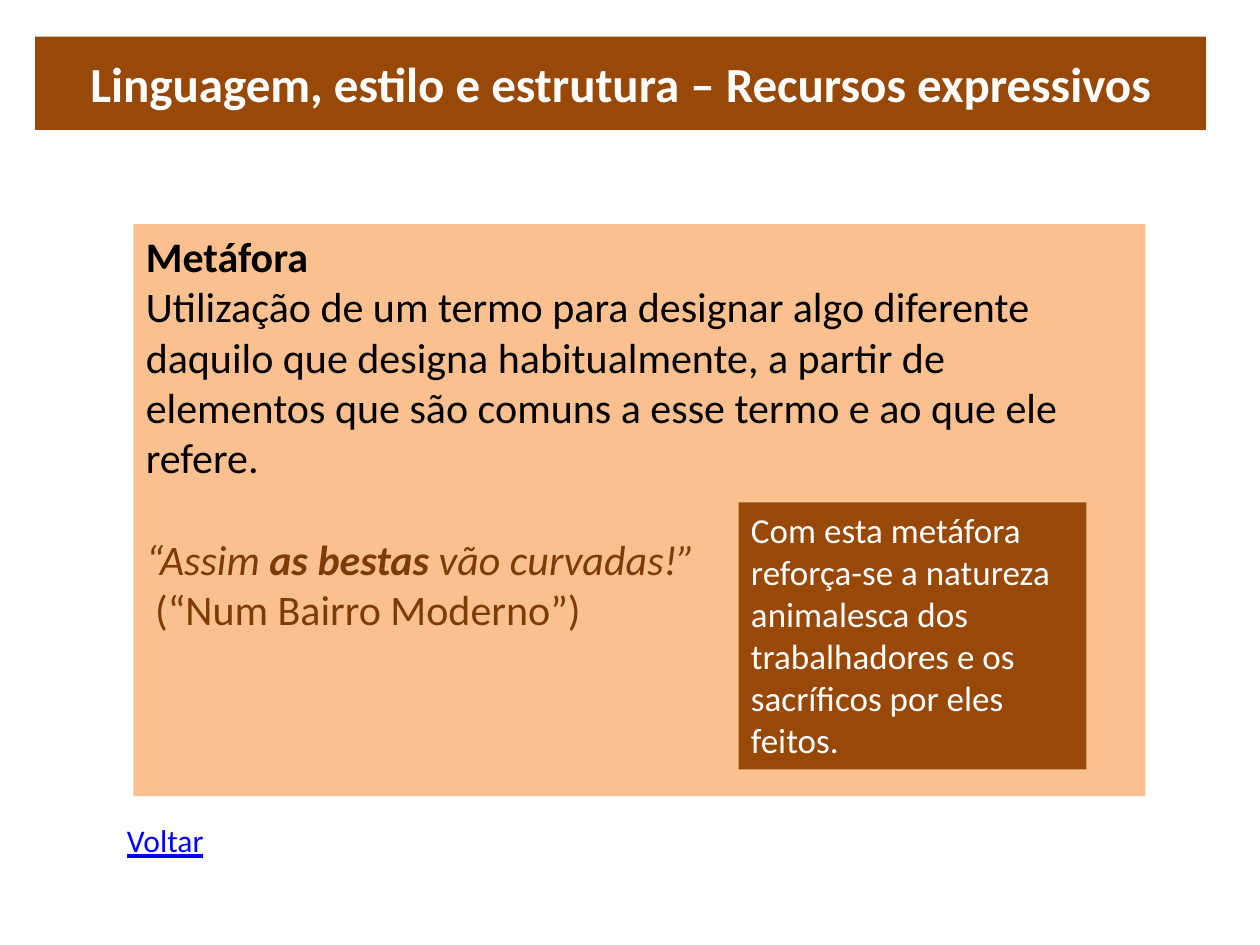
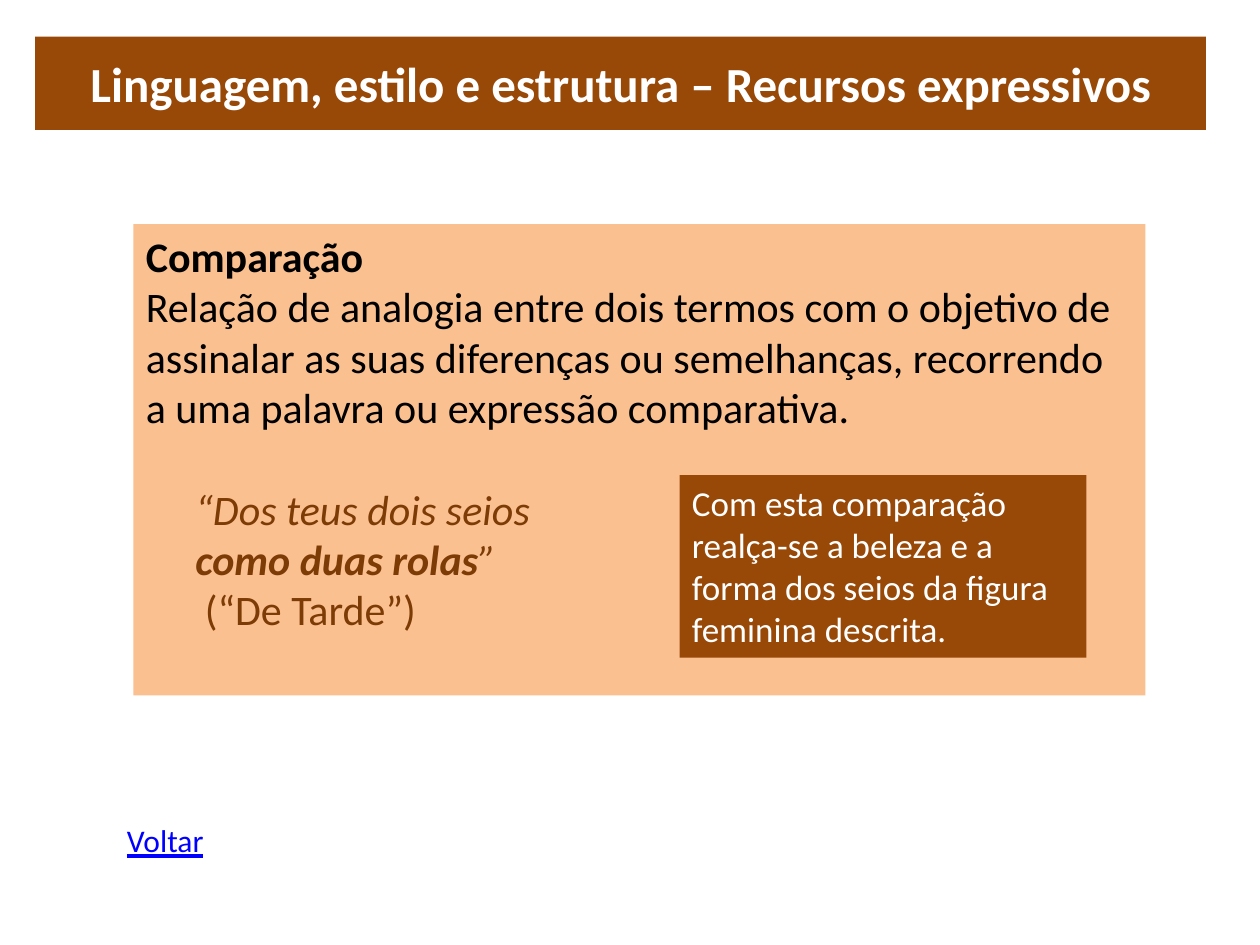
from lxml import etree
from pptx import Presentation, util as u
from pptx.dml.color import RGBColor
from pptx.enum import shapes, text
from pptx.oxml.ns import qn

HUES = {"brown": "984807", "peach": "FAC090", "quote": "7D3B05",
        "white": "FFFFFF", "black": "000000", "link": "0000FF"}
HEAD = "Linguagem, estilo e estrutura – Recursos expressivos"
EDGE = 21.9
GAP = 1.03
SPACE = 0.19

TERM = {"size": 24, "bold": True, "hue": "black"}
BODY = {**TERM, "bold": False}
CITE = {**BODY, "italic": True, "hue": "quote"}
KEY = {**CITE, "bold": True}
WORK = {**CITE, "italic": False}
NOTE = {"size": 20, "hue": "white"}
BACK = {"size": 18, "underline": True, "hue": "link"}
TITLE = {"size": 28, "bold": True, "hue": "white"}

SLIDES = [
    {"term": "Metáfora", "tall": 11.53, "pad": 0,
     "body": "Utilização de um termo para designar algo diferente daquilo que "
             "designa habitualmente, a partir de elementos que são comuns a "
             "esse termo e ao que ele refere.",
     "quote": [[("“Assim ", CITE), ("as bestas ", KEY), ("vão curvadas!”", CITE)]],
     "work": "(“Num Bairro Moderno”)",
     "note": ["Com esta metáfora reforça-se a natureza",
              "animalesca dos trabalhadores e os",
              "sacríficos por eles feitos."],
     "box": (10.13, 7.01, 5.38)},
    {"term": "Comparação", "tall": 9.5, "pad": 1,
     "body": "Relação de analogia entre dois termos com o objetivo de assinalar "
             "as suas diferenças ou semelhanças, recorrendo a uma palavra ou "
             "expressão comparativa.",
     "quote": [[("“Dos teus dois seios", CITE)],
               [("como duas rolas", KEY), ("”", CITE)]],
     "work": "(“De Tarde”)",
     "note": ["Com esta comparação realça-se a beleza e a forma dos seios da "
              "figura feminina descrita."],
     "box": (9.58, 8.2, 3.68)},
]


def paint(shape, hue):
    shape.fill.solid()
    shape.fill.fore_color.rgb = RGBColor.from_string(HUES[hue])
    shape.line.fill.background()


def place(shape, *at):
    for name, size in zip(("left", "top", "width", "height"), at):
        setattr(shape, name, u.Cm(size))


def style(font, form):
    for name, value in {"name": "Calibri", **form}.items():
        if name == "hue":
            font.color.rgb = RGBColor.from_string(HUES[value])
        else:
            setattr(font, name, u.Pt(value) if name == "size" else value)


def write(shape, paras, align=text.PP_ALIGN.LEFT, anchor=text.MSO_ANCHOR.TOP):
    frame = shape.text_frame
    frame.word_wrap = True
    frame.auto_size = text.MSO_AUTO_SIZE.NONE
    frame.vertical_anchor = anchor
    for i, (runs, pad, gap) in enumerate(paras):
        para = frame.add_paragraph() if i else frame.paragraphs[0]
        para.alignment = align
        para.space_before = u.Cm(gap)
        if pad:
            para._p.get_or_add_pPr().set("marL", str(u.Cm(pad)))
        for words, form in runs:
            run = para.add_run()
            run.text = words
            style(run.font, form)


def plain(words, form, pad=0):
    return [(words, form)], pad, 0


def add_title(slide):
    title = slide.shapes.title
    place(title, 0.71, 0.74, 23.6, 1.88)
    geom = etree.SubElement(title._element.spPr, qn("a:prstGeom"), prst="roundRect")
    etree.SubElement(geom, qn("a:avLst"))
    paint(title, "brown")
    write(title, [plain(HEAD, TITLE)], text.PP_ALIGN.CENTER, text.MSO_ANCHOR.MIDDLE)


def add_panel(slide, at, hue, paras):
    panel = slide.shapes.add_shape(shapes.MSO_SHAPE.RECTANGLE, *map(u.Cm, at))
    panel.shadow.inherit = False
    paint(panel, hue)
    write(panel, paras)


def add_term(slide, item):
    pad = item["pad"]
    quote = [(runs, pad, 0 if i else GAP) for i, runs in enumerate(item["quote"])]
    paras = [plain(item["term"], TERM), plain(item["body"], BODY), *quote,
             plain(item["work"], WORK, pad + SPACE)]
    add_panel(slide, (2.69, 4.52, 20.4, item["tall"]), "peach", paras)


def add_note(slide, item):
    top, wide, tall = item["box"]
    add_panel(slide, (EDGE - wide, top, wide, tall), "brown",
              [plain(line, NOTE) for line in item["note"]])


def add_back(slide):
    box = slide.shapes.add_textbox(*map(u.Cm, (2.31, 16.43, 4.39, 1.02)))
    write(box, [plain("Voltar", BACK)])


def main():
    deck = Presentation()
    deck.slide_width, deck.slide_height = u.Cm(25.4), u.Cm(19.05)
    for item in SLIDES:
        slide = deck.slides.add_slide(deck.slide_layouts[5])
        add_title(slide)
        add_term(slide, item)
        add_note(slide, item)
        add_back(slide)
    deck.save("out.pptx")


if __name__ == "__main__":
    main()
